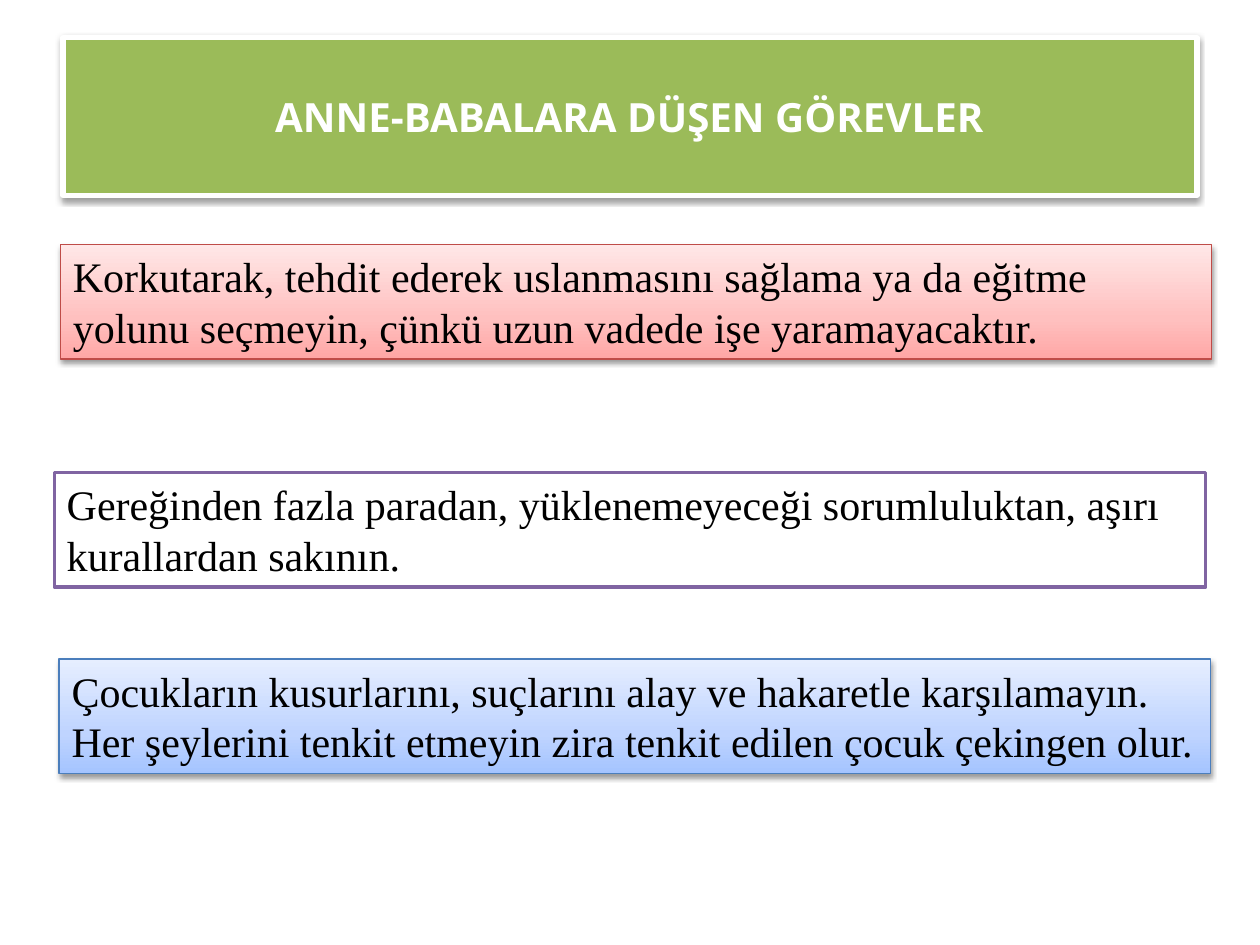
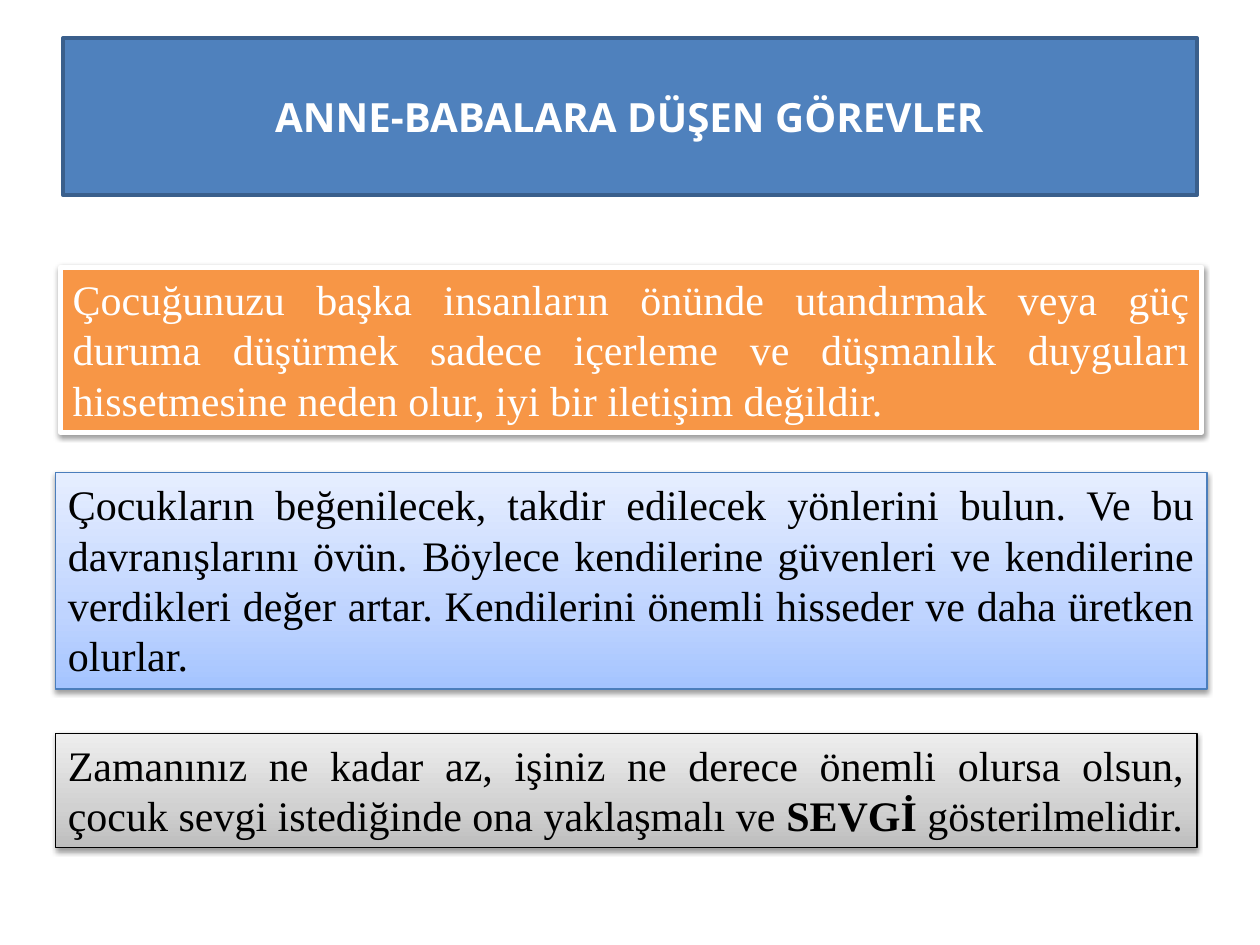
from dataclasses import dataclass

import lxml.etree
import pptx
import pptx.dml.color
import pptx.enum.shapes
import pptx.enum.text
import pptx.oxml.ns
import pptx.util

ALIGN = pptx.enum.text.PP_ALIGN
ANCHOR = pptx.enum.text.MSO_ANCHOR


@dataclass(frozen=True)
class PanelStyle:
    fill: tuple  # one colour, or three gradient colours from bottom to top
    line: str
    line_width: float
    text: str = "000000"
    shadow: bool = True


class Theme:
    title_font, title_size = "Open Sans", 23
    body_font, body_size = "Times New Roman", 24
    gradient_positions = (0, 35, 100)
    shadow_color, shadow_opacity = "000000", 38
    shadow_blur, shadow_distance = 3.1, 1.6

    green = PanelStyle(("9BBB59",), "FFFFFF", 3, "FFFFFF")
    navy = PanelStyle(("4F81BD",), "3A5F8C", 2, "FFFFFF", shadow=False)
    orange = PanelStyle(("F79646",), "FFFFFF", 3, "FFFFFF")
    outline = PanelStyle(("FFFFFF",), "8064A2", 2, shadow=False)
    red = PanelStyle(("FFA6A5", "FFC0BF", "FFE7E7"), "BF4C48", 0.75)
    blue = PanelStyle(("A4C4FF", "BFD4FF", "E6EEFF"), "4B7EBC", 0.75)
    gray = PanelStyle(("BDBDBD", "D1D1D1", "EEEEEE"), "000000", 0.75)


TITLE = "ANNE-BABALARA DÜŞEN GÖREVLER"
TITLE_BOX = (36, 21.6, 648, 90)


def rgb(value):
    return pptx.dml.color.RGBColor.from_string(value)


def add_element(parent, tag, **attributes):
    element = lxml.etree.SubElement(parent, pptx.oxml.ns.qn(tag))
    for name, value in attributes.items():
        element.set(name, str(value))
    return element


def fill_panel(shape, colors):
    if len(colors) == 1:
        shape.fill.solid()
        shape.fill.fore_color.rgb = rgb(colors[0])
        return
    shape.fill.gradient()
    shape.fill.gradient_angle = 90
    stops = next(shape._element.iter(pptx.oxml.ns.qn("a:gsLst")))
    for stop in list(stops):
        stops.remove(stop)
    for position, color in zip(Theme.gradient_positions, colors):
        stop = add_element(stops, "a:gs", pos=position * 1000)
        add_element(stop, "a:srgbClr", val=color)


def cast_shadow(shape):
    effects = shape._element.spPr.find(pptx.oxml.ns.qn("a:effectLst"))
    shadow = add_element(effects, "a:outerShdw",
                         blurRad=pptx.util.Pt(Theme.shadow_blur),
                         dist=pptx.util.Pt(Theme.shadow_distance),
                         dir=90 * 60000, rotWithShape=0)
    color = add_element(shadow, "a:srgbClr", val=Theme.shadow_color)
    add_element(color, "a:alpha", val=Theme.shadow_opacity * 1000)


def add_text(paragraph, text, *, font, size, color, bold=False):
    run = paragraph.add_run()
    run.text = text
    run.font.name = font
    run.font.size = pptx.util.Pt(size)
    run.font.bold = bold
    run.font.color.rgb = rgb(color)


def add_panel(slide, box, style, align, anchor):
    """Draw a styled rectangle and return its empty paragraph."""
    shape = slide.shapes.add_shape(
        pptx.enum.shapes.MSO_SHAPE.RECTANGLE, *map(pptx.util.Pt, box))
    fill_panel(shape, style.fill)
    shape.line.color.rgb = rgb(style.line)
    shape.line.width = pptx.util.Pt(style.line_width)
    shape.shadow.inherit = False
    if style.shadow:
        cast_shadow(shape)
    shape.text_frame.word_wrap = True
    shape.text_frame.vertical_anchor = anchor
    paragraph = shape.text_frame.paragraphs[0]
    paragraph.alignment = align
    return paragraph


def add_title(slide, box, style):
    paragraph = add_panel(slide, box, style, ALIGN.CENTER, ANCHOR.MIDDLE)
    add_text(paragraph, TITLE, font=Theme.title_font, size=Theme.title_size,
             color=style.text, bold=True)


def add_advice(slide, box, style, text, align):
    """Write advice in a panel; every second part between asterisks is bold."""
    paragraph = add_panel(slide, box, style, align, ANCHOR.TOP)
    for index, part in enumerate(text.split("*")):
        add_text(paragraph, part, font=Theme.body_font, size=Theme.body_size,
                 color=style.text, bold=index % 2 == 1)


def add_duties_slide(presentation, title_style, align, advice):
    slide = presentation.slides.add_slide(presentation.slide_layouts[6])
    for box, style, text in advice:
        add_advice(slide, box, style, text, align)
    add_title(slide, TITLE_BOX, title_style)


def main():
    presentation = pptx.Presentation()
    presentation.slide_width = pptx.util.Pt(720)
    presentation.slide_height = pptx.util.Pt(540)

    # What to avoid
    add_duties_slide(presentation, Theme.green, ALIGN.LEFT, [
        ((31, 270, 658, 65.5), Theme.outline,
         "Gereğinden fazla paradan, yüklenemeyeceği sorumluluktan, aşırı "
         "kurallardan sakının."),
        ((34.5, 139.7, 658, 65.5), Theme.red,
         "Korkutarak, tehdit ederek uslanmasını sağlama ya da eğitme yolunu "
         "seçmeyin, çünkü uzun vadede işe yaramayacaktır."),
        ((33.8, 376.6, 658, 65.5), Theme.blue,
         "Çocukların kusurlarını, suçlarını alay ve hakaretle karşılamayın. "
         "Her şeylerini tenkit etmeyin zira tenkit edilen çocuk çekingen "
         "olur."),
    ])

    # Respect, praise and love
    add_duties_slide(presentation, Theme.navy, ALIGN.JUSTIFY, [
        ((34.5, 152.7, 652.3, 94.3), Theme.orange,
         "Çocuğunuzu başka insanların önünde utandırmak veya güç duruma "
         "düşürmek sadece içerleme ve düşmanlık duyguları hissetmesine neden "
         "olur, iyi bir iletişim değildir."),
        ((31.7, 270, 658, 123.8), Theme.blue,
         "Çocukların beğenilecek, takdir edilecek yönlerini bulun. Ve bu "
         "davranışlarını övün. Böylece kendilerine güvenleri ve kendilerine "
         "verdikleri değer artar. Kendilerini önemli hisseder ve daha "
         "üretken olurlar."),
        ((31.7, 419, 652.3, 65.5), Theme.gray,
         "Zamanınız ne kadar az, işiniz ne derece önemli olursa olsun, çocuk "
         "sevgi istediğinde ona yaklaşmalı ve *SEVGİ* gösterilmelidir."),
    ])

    presentation.save("out.pptx")


if __name__ == "__main__":
    main()
